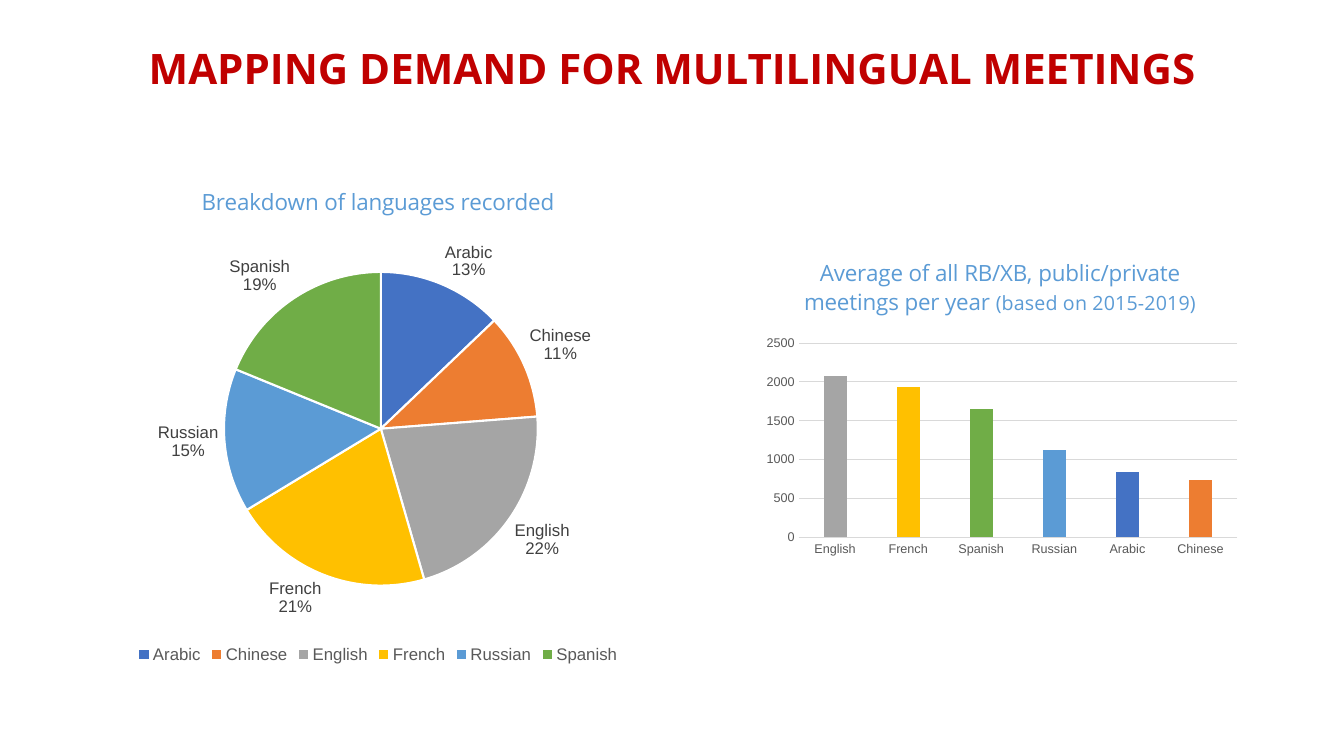
import pptx
import pptx.chart.data
import pptx.dml.color
import pptx.enum.chart
import pptx.enum.text
import pptx.oxml
import pptx.oxml.ns
import pptx.util

RGBColor = pptx.dml.color.RGBColor
Inches = pptx.util.Inches
Pt = pptx.util.Pt

RED = RGBColor(0xC0, 0x00, 0x00)
BLUE = RGBColor(0x5B, 0x9B, 0xD5)
WHITE = RGBColor(0xFF, 0xFF, 0xFF)
BLACK = RGBColor(0x00, 0x00, 0x00)
LABEL_GRAY = RGBColor(0x40, 0x40, 0x40)
AXIS_GRAY = RGBColor(0x59, 0x59, 0x59)
GRID_GRAY = RGBColor(0xD9, 0xD9, 0xD9)
LANGUAGE_COLORS = {
    "Arabic": RGBColor(0x44, 0x72, 0xC4),
    "Chinese": RGBColor(0xED, 0x7D, 0x31),
    "English": RGBColor(0xA5, 0xA5, 0xA5),
    "French": RGBColor(0xFF, 0xC0, 0x00),
    "Russian": BLUE,
    "Spanish": RGBColor(0x70, 0xAD, 0x47),
}
LANGUAGE_SHARES = {"Arabic": 13, "Chinese": 11, "English": 22,
                   "French": 21, "Russian": 15, "Spanish": 19}
MEETINGS_PER_YEAR = {"English": 2070, "French": 1940, "Spanish": 1650,
                     "Russian": 1130, "Arabic": 840, "Chinese": 740}


def style_font(font, size, color, name="Arial", bold=False):
    font.size = Pt(size)
    font.color.rgb = color
    font.name = name
    font.bold = bold


def set_plot_layout(chart, x, y, w, h):
    plot_area = chart.element.find(".//" + pptx.oxml.ns.qn("c:plotArea"))
    old_layout = plot_area.find(pptx.oxml.ns.qn("c:layout"))
    if old_layout is not None:
        plot_area.remove(old_layout)
    plot_area.insert(0, pptx.oxml.parse_xml(
        f'<c:layout {pptx.oxml.ns.nsdecls("c")}><c:manualLayout>'
        '<c:layoutTarget val="inner"/><c:xMode val="edge"/><c:yMode val="edge"/>'
        f'<c:x val="{x}"/><c:y val="{y}"/><c:w val="{w}"/><c:h val="{h}"/>'
        '</c:manualLayout></c:layout>'))


def add_language_chart(slide, box, chart_type, values, title_runs, plot_box):
    chart_data = pptx.chart.data.CategoryChartData()
    chart_data.categories = list(values)
    chart_data.add_series("Series 1", list(values.values()))
    chart = slide.shapes.add_chart(
        chart_type, *(Inches(length) for length in box), chart_data).chart
    style_font(chart.font, 10, BLACK)
    chart.has_title = True
    chart.chart_title.include_in_layout = False
    heading = chart.chart_title.text_frame.paragraphs[0]
    style_font(heading.font, 16, BLUE, "Open Sans")
    for text, size in title_runs:
        run = heading.add_run()
        run.text = text
        style_font(run.font, size, BLUE, "Open Sans")
    set_plot_layout(chart, *plot_box)
    for index, language in enumerate(values):
        fill = chart.plots[0].series[0].points[index].format.fill
        fill.solid()
        fill.fore_color.rgb = LANGUAGE_COLORS[language]
    return chart


def add_title(slide, left, top, width, height):
    title_box = slide.shapes.add_textbox(
        Inches(left), Inches(top), Inches(width), Inches(height))
    frame = title_box.text_frame
    frame.word_wrap = True
    frame.vertical_anchor = pptx.enum.text.MSO_ANCHOR.MIDDLE
    frame.margin_left = frame.margin_right = Inches(0.07)
    frame.margin_top = frame.margin_bottom = Inches(0.04)
    heading = frame.paragraphs[0]
    heading.text = "MAPPING DEMAND FOR MULTILINGUAL MEETINGS"
    heading.alignment = pptx.enum.text.PP_ALIGN.CENTER
    heading.line_spacing = 0.9
    style_font(heading.font, 30, RED, "Open Sans", True)


def add_languages_pie(slide, *box):
    chart = add_language_chart(
        slide, box, pptx.enum.chart.XL_CHART_TYPE.PIE, LANGUAGE_SHARES,
        [("Breakdown of languages recorded", 16)], (0.23, 0.21, 0.55, 0.63))
    chart.has_legend = True
    chart.legend.position = pptx.enum.chart.XL_LEGEND_POSITION.BOTTOM
    chart.legend.include_in_layout = False
    style_font(chart.legend.font, 12, AXIS_GRAY)
    pie = chart.plots[0]
    pie.vary_by_categories = True
    for index in range(len(LANGUAGE_SHARES)):
        border = pie.series[0].points[index].format.line
        border.color.rgb = WHITE
        border.width = Pt(1.5)
    labels = pie.series[0].data_labels
    labels.show_category_name = True
    labels.show_percentage = True
    labels.show_value = False
    labels.number_format = "0%"
    labels.number_format_is_linked = False
    labels.position = pptx.enum.chart.XL_LABEL_POSITION.OUTSIDE_END
    style_font(labels.font, 12, LABEL_GRAY)


def add_meetings_columns(slide, *box):
    chart = add_language_chart(
        slide, box, pptx.enum.chart.XL_CHART_TYPE.COLUMN_CLUSTERED,
        MEETINGS_PER_YEAR,
        [("Average of all RB/XB, public/private meetings per year ", 16),
         ("(based on 2015-2019)", 14)], (0.1, 0.31, 0.87, 0.59))
    chart.has_legend = False
    columns = chart.plots[0]
    columns.vary_by_categories = False
    columns.gap_width = 219
    columns.overlap = -27
    for axis in (chart.category_axis, chart.value_axis):
        axis.major_tick_mark = pptx.enum.chart.XL_TICK_MARK.NONE
        axis.minor_tick_mark = pptx.enum.chart.XL_TICK_MARK.NONE
        style_font(axis.tick_labels.font, 9, AXIS_GRAY)
    chart.value_axis.minimum_scale = 0
    chart.value_axis.maximum_scale = 2500
    chart.value_axis.major_unit = 500
    chart.value_axis.format.line.fill.background()
    for line in (chart.category_axis.format.line,
                 chart.value_axis.major_gridlines.format.line):
        line.color.rgb = GRID_GRAY
        line.width = Pt(0.75)


def main():
    presentation = pptx.Presentation()
    presentation.slide_width = Inches(13.33)
    presentation.slide_height = Inches(7.5)
    slide = presentation.slides.add_slide(presentation.slide_layouts[6])
    add_title(slide, 0.92, 0.2, 11.5, 1)
    add_languages_pie(slide, 0.92, 1.64, 5.66, 4.98)
    add_meetings_columns(slide, 7.42, 2.39, 5, 3.27)
    presentation.save("out.pptx")


if __name__ == "__main__":
    main()
